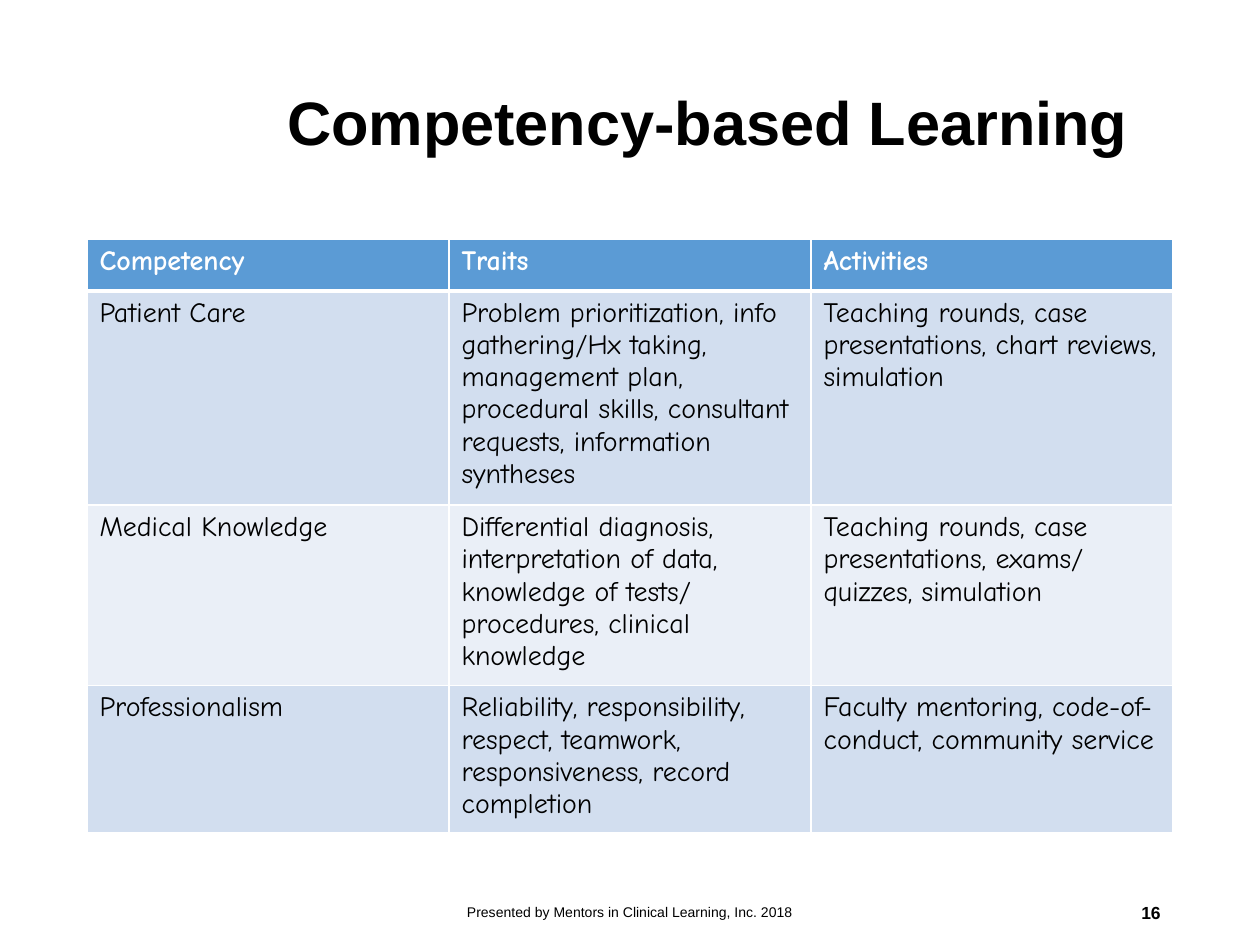
from lxml.etree import SubElement
from pptx import Presentation
from pptx.dml.color import RGBColor
from pptx.enum.text import MSO_ANCHOR, PP_ALIGN
from pptx.oxml.ns import qn
from pptx.util import Inches, Pt

BLACK = RGBColor(0x00, 0x00, 0x00)
WHITE = RGBColor(0xFF, 0xFF, 0xFF)
HEADER_BLUE = RGBColor(0x5B, 0x9B, 0xD5)
BAND_DARK = RGBColor(0xD2, 0xDE, 0xEF)
BAND_LIGHT = RGBColor(0xEA, 0xEF, 0xF7)

COMPETENCIES = [
    ("Competency", "Traits", "Activities"),
    (
        "Patient Care",
        "Problem prioritization, info gathering/Hx taking, management plan, "
        "procedural skills, consultant requests, information syntheses",
        "Teaching rounds, case presentations, chart reviews, simulation",
    ),
    (
        "Medical Knowledge",
        "Differential diagnosis, interpretation of data, knowledge of tests/\n"
        "procedures, clinical knowledge",
        "Teaching rounds, case presentations, exams/ quizzes, simulation",
    ),
    (
        "Professionalism",
        "Reliability, responsibility, respect, teamwork, responsiveness, record completion",
        "Faculty mentoring, code-of-conduct, community service",
    ),
]
ROW_HEIGHTS = (0.41, 1.7, 1.43, 1.17)


def write_text(frame, text, size, font="Arial", color=BLACK, bold=False,
               align=PP_ALIGN.LEFT, line_spacing=None):
    """Fill a text frame, one paragraph per line of text."""
    frame.word_wrap = True
    frame.text = text
    for paragraph in frame.paragraphs:
        paragraph.alignment = align
        paragraph.line_spacing = line_spacing
        paragraph.font.size = Pt(size)
        paragraph.font.name = font
        paragraph.font.bold = bold
        paragraph.font.color.rgb = color


def add_label(slide, box, text, size, **text_format):
    """Place vertically centred text in a box given in inches."""
    label = slide.shapes.add_textbox(*map(Inches, box))
    label.text_frame.vertical_anchor = MSO_ANCHOR.MIDDLE
    write_text(label.text_frame, text, size, **text_format)


def set_borders(cell, bottom_width):
    """Draw white borders around a table cell."""
    properties = cell._tc.get_or_add_tcPr()
    widths = {"a:lnL": 1, "a:lnR": 1, "a:lnT": 1, "a:lnB": bottom_width}
    for side, width in widths.items():
        line = SubElement(properties, qn(side), w=str(Pt(width)))
        fill = SubElement(line, qn("a:solidFill"))
        SubElement(fill, qn("a:srgbClr"), val=str(WHITE))


def add_competency_table(slide, box):
    """Place the banded table of competencies, traits and activities."""
    table = slide.shapes.add_table(
        len(COMPETENCIES), len(COMPETENCIES[0]), *map(Inches, box)).table
    for row, height in zip(table.rows, ROW_HEIGHTS):
        row.height = Inches(height)
    for row_index, texts in enumerate(COMPETENCIES):
        is_header = row_index == 0
        band = BAND_DARK if row_index % 2 else BAND_LIGHT
        for column_index, text in enumerate(texts):
            cell = table.cell(row_index, column_index)
            set_borders(cell, 3 if is_header or False else 1)
            if row_index == 1:
                cell._tc.tcPr.find(qn("a:lnT")).set("w", str(Pt(3)))
            cell.fill.solid()
            cell.fill.fore_color.rgb = HEADER_BLUE if is_header else band
            write_text(cell.text_frame, text, 16, font="Comic Neue",
                       color=WHITE if is_header else BLACK, bold=is_header)


def add_footer(slide, box):
    """Place the presenter line and the slide number along the bottom."""
    left, top, width, height = box
    add_label(slide, (left, top, 3.38, height),
              "Presented by Mentors in Clinical Learning, Inc. 2018", 8,
              align=PP_ALIGN.CENTER)
    number_width = 2.25
    add_label(slide, (left + width - number_width, top, number_width, height),
              "16", 10, bold=True, align=PP_ALIGN.RIGHT)


def main():
    """Build and save the slide."""
    presentation = Presentation()
    presentation.slide_width = Inches(10)
    presentation.slide_height = Inches(7.5)
    slide = presentation.slides.add_slide(presentation.slide_layouts[6])
    add_competency_table(slide, (0.69, 1.9, 8.62, sum(ROW_HEIGHTS)))
    add_label(slide, (2.18, 0.27, 7.14, 1.45), "Competency-based Learning", 35,
              bold=True, line_spacing=0.9)
    add_footer(slide, (3.31, 7.04, 6, 0.4))
    presentation.save("out.pptx")


if __name__ == "__main__":
    main()
